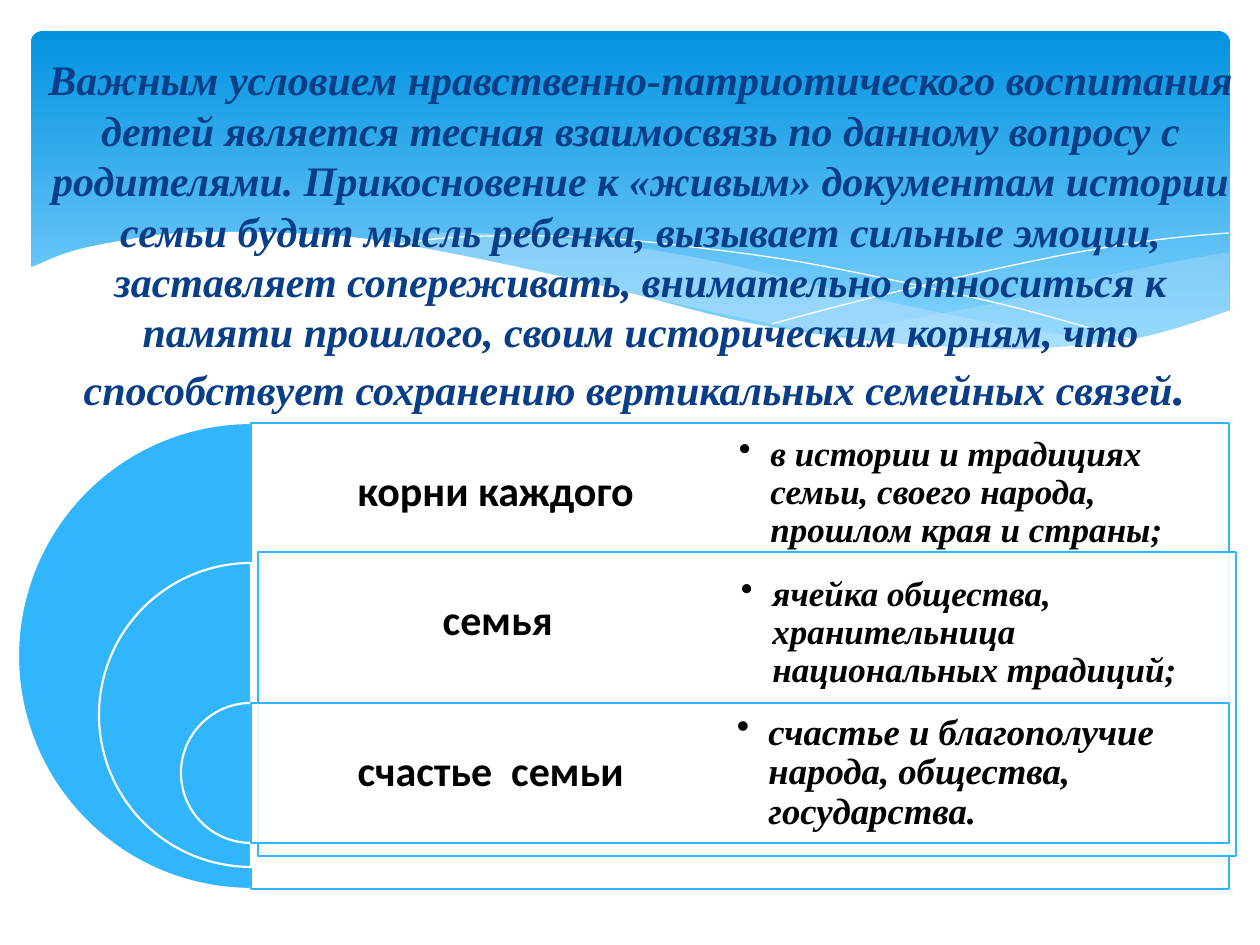
import pptx
import pptx.util
import pptx.dml.color
import pptx.enum.shapes
import pptx.enum.text
import pptx.oxml.ns
from lxml import etree

PX = 914400 // 126
SHAPE = pptx.enum.shapes.MSO_SHAPE
ALIGN = pptx.enum.text.PP_ALIGN
COLORS = {"white": "FFFFFF", "black": "000000", "navy": "073E87", "sky": "31B6FD",
          "banner_top": "0293E0", "banner_bottom": "83D3FE", "pale": "C6E7FC"}
SERIF, SANS = "Times New Roman", "Calibri"

TITLE = ("Важным условием нравственно-патриотического воспитания детей является тесная "
         "взаимосвязь по данному вопросу с родителями. Прикосновение к «живым» документам "
         "истории семьи будит мысль ребенка, вызывает сильные эмоции, заставляет "
         "сопереживать, внимательно относиться к памяти прошлого, своим историческим "
         "корням, что способствует сохранению вертикальных семейных связей")

ROW_TOP, ROW_HEIGHT, AXIS_X, PANEL_WIDTH = 423, 140, 251, 978
ROWS = [
    {"label": "корни каждого", "size": 20, "inset": 13, "diameter": 466,
     "panel": (251, 423), "note_box": (726, 517),
     "note": "в истории и традициях семьи, своего народа, прошлом края и страны;"},
    {"label": "семья ", "size": 20, "inset": 13, "diameter": 304,
     "panel": (258, 552), "note_box": (728, 512),
     "note": "ячейка общества, хранительница национальных традиций;"},
    {"label": "счастье  семьи ", "size": 21, "inset": 11, "diameter": 140,
     "panel": (251, 703), "note_box": (726, 517),
     "note": "счастье и благополучие народа, общества, государства."},
]

# Each wave is a list of smooth edges joined end to end.
RIGHT_WAVE = [
    [(1229, 252), (1178, 261), (1123, 272), (1085, 281), (1014, 299), (949, 312), (833, 334)],
    [(833, 334), (888, 341), (939, 346), (1012, 350), (1075, 349), (1120, 344),
     (1160, 334), (1196, 324), (1229, 311)],
]
MIDDLE_WAVE = [
    [(1125, 344), (1055, 334), (976, 320), (890, 302), (793, 280), (736, 266), (682, 255),
     (632, 247), (586, 241), (529, 236), (479, 233), (433, 233), (394, 237), (360, 241)],
    [(360, 241), (431, 251), (509, 266), (566, 280), (668, 302), (757, 321), (838, 335),
     (910, 345), (973, 349), (1031, 350), (1080, 348), (1125, 344)],
]
LONG_THREAD = [[(389, 246), (413, 242), (445, 238), (487, 236), (546, 236), (616, 239),
                (701, 248), (801, 262), (916, 285), (1001, 304), (1047, 316), (1143, 343)]]
SHORT_THREAD = [[(772, 324), (847, 304), (942, 281), (1053, 257), (1128, 244),
                 (1182, 237), (1229, 233)]]
WHITE_WAVE = [
    [(1231, 310), (1184, 326), (1133, 339), (1071, 346), (1019, 349), (959, 347), (892, 343),
     (816, 334), (730, 319), (634, 294), (563, 277), (460, 255), (368, 239), (290, 233),
     (223, 232), (166, 234), (120, 241), (84, 248), (58, 256), (37, 265), (29, 268)],
    [(29, 415), (1231, 415)],
]
WAVES = [
    (RIGHT_WAVE, {"fill": "pale", "alpha": 29}),
    (MIDDLE_WAVE, {"fill": "pale", "alpha": 40}),
    (LONG_THREAD, {"line": "white", "width": 0}),
    (SHORT_THREAD, {"line": "white", "width": 0}),
    (WHITE_WAVE, {"fill": "white"}),
]


def rgb(name):
    return pptx.dml.color.RGBColor.from_string(COLORS[name])


def emu(*lengths):
    return [round(length * PX) for length in lengths]


def paint(shape, fill=None, alpha=100, line=None, width=1.25):
    shape.shadow.inherit = False
    if fill:
        shape.fill.solid()
        shape.fill.fore_color.rgb = rgb(fill)
        if alpha < 100:
            color = shape.fill._xPr.find(".//" + pptx.oxml.ns.qn("a:srgbClr"))
            etree.SubElement(color, pptx.oxml.ns.qn("a:alpha"), val=str(alpha * 1000))
    else:
        shape.fill.background()
    if line:
        shape.line.color.rgb = rgb(line)
        shape.line.width = pptx.util.Pt(width)
    else:
        shape.line.fill.background()


def smooth(points, steps=4):
    """Return points along a Catmull-Rom spline through the given ones."""
    padded = [points[0], *points, points[-1]]
    curve = [points[0]]
    for a, b, c, d in zip(padded, padded[1:], padded[2:], padded[3:]):
        for t in (step / steps for step in range(1, steps + 1)):
            curve.append(tuple(
                (2 * q + (r - p) * t + (2 * p - 5 * q + 4 * r - s) * t ** 2
                 + (3 * q - p - 3 * r + s) * t ** 3) / 2
                for p, q, r, s in zip(a, b, c, d)))
    return curve


def add_wave(slide, edges, **style):
    start, *rest = [emu(*point) for edge in edges for point in smooth(edge)]
    builder = slide.shapes.build_freeform(*start, scale=1.0)
    builder.add_line_segments(rest, close="fill" in style)
    paint(builder.convert_to_shape(), **style)


def add_text(slide, box, runs, font, color="black", italic=False, align=ALIGN.LEFT,
             spacing=0.9, insets=(13, 13), bullet=False):
    """Add a text box; runs are (text, size in points) pairs."""
    frame = slide.shapes.add_textbox(*emu(*box)).text_frame
    frame.word_wrap = True
    frame.vertical_anchor = pptx.enum.text.MSO_ANCHOR.MIDDLE
    frame.margin_left = frame.margin_right = insets[0] * PX
    frame.margin_top = frame.margin_bottom = insets[1] * PX
    paragraph = frame.paragraphs[0]
    paragraph.alignment = align
    paragraph.line_spacing = spacing
    if bullet:
        properties = paragraph._p.get_or_add_pPr()
        indent = 228600
        properties.set("marL", str(indent))
        properties.set("indent", str(-indent))
        etree.SubElement(properties, pptx.oxml.ns.qn("a:buChar"), char="•")
    for text, size in runs:
        run = paragraph.add_run()
        run.text = text
        run.font.name = font
        run.font.size = pptx.util.Pt(size)
        run.font.bold = True
        run.font.italic = italic
        run.font.color.rgb = rgb(color)


def add_banner(slide):
    banner = slide.shapes.add_shape(SHAPE.ROUNDED_RECTANGLE, *emu(31, 31, 1199, 340))
    banner.adjustments[0] = 0.034
    paint(banner)
    banner.fill.gradient()
    banner.fill.gradient_angle = 270
    stops = zip(banner.fill.gradient_stops, (0, 0.9), ("banner_top", "banner_bottom"))
    for stop, position, color in stops:
        stop.position = position
        stop.color.rgb = rgb(color)
    for edges, style in WAVES:
        add_wave(slide, edges, **style)


def add_rows(slide):
    tops = [ROW_TOP + index * ROW_HEIGHT for index in range(len(ROWS))]
    for row, top in zip(ROWS, tops):
        diameter = row["diameter"]
        half_disc = slide.shapes.add_shape(
            SHAPE.PIE, *emu(AXIS_X - diameter / 2, top, diameter, diameter))
        half_disc.adjustments[0], half_disc.adjustments[1] = 54, 162
        paint(half_disc, fill="sky", line="white")
        panel = slide.shapes.add_shape(
            SHAPE.RECTANGLE, *emu(*row["panel"], PANEL_WIDTH, diameter))
        paint(panel, fill="white", alpha=90, line="sky")
        add_text(slide, (*row["panel"], PANEL_WIDTH / 2, ROW_HEIGHT), [(row["label"], 24)],
                 SANS, align=ALIGN.CENTER)
    for row, top in zip(ROWS, tops):
        left, width = row["note_box"]
        add_text(slide, (left, top, width, ROW_HEIGHT), [(row["note"], row["size"])],
                 SERIF, italic=True, insets=(row["inset"], row["inset"]), bullet=True)


def main():
    deck = pptx.Presentation()
    deck.slide_width, deck.slide_height = emu(1260, 945)
    slide = deck.slides.add_slide(deck.slide_layouts[6])
    add_banner(slide)
    add_rows(slide)
    add_text(slide, (35, 36, 1211, 397), [(TITLE, 24), (". ", 28)], SERIF, color="navy",
             italic=True, align=ALIGN.CENTER, spacing=1.0, insets=(12, 6))
    deck.save("out.pptx")


if __name__ == "__main__":
    main()
